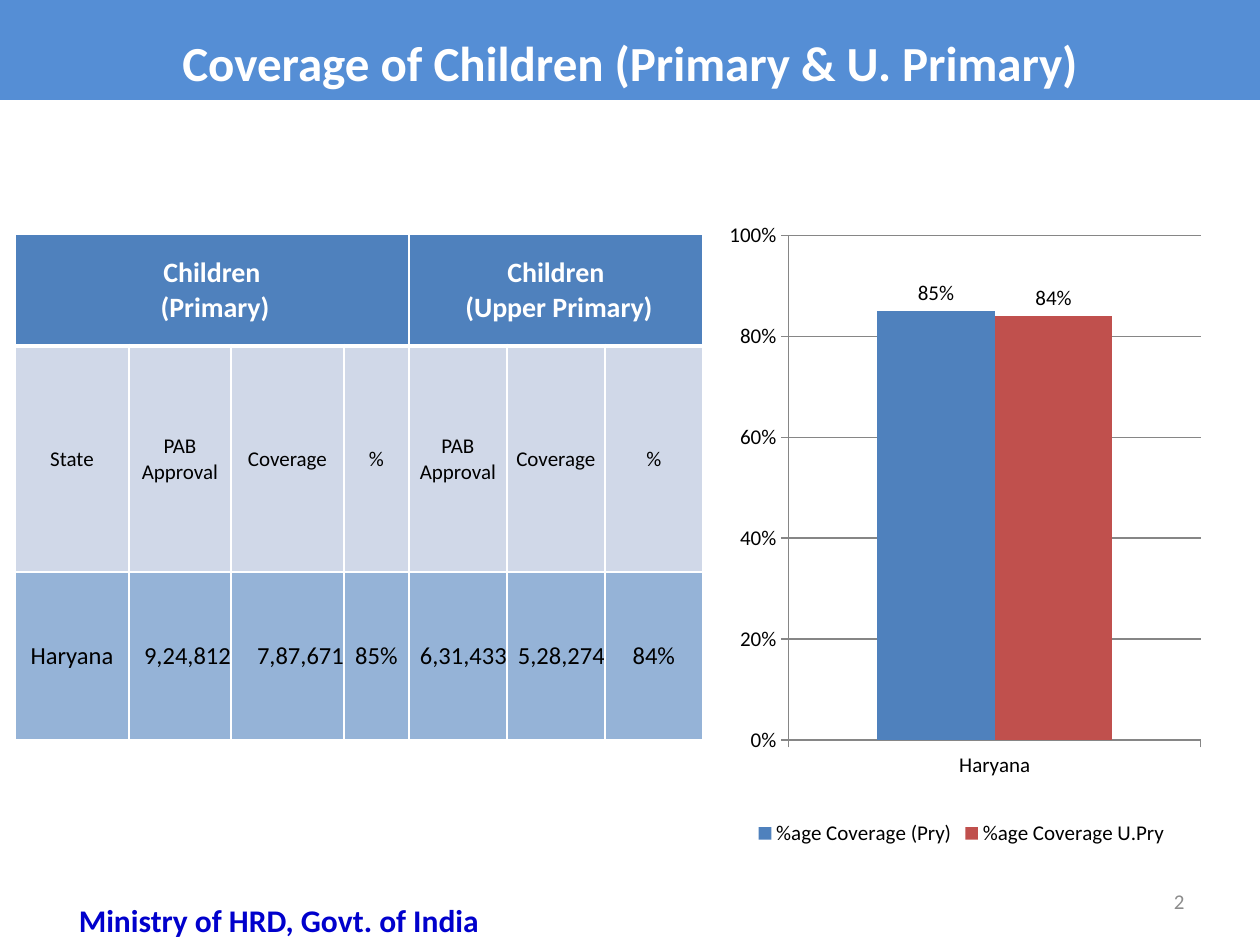
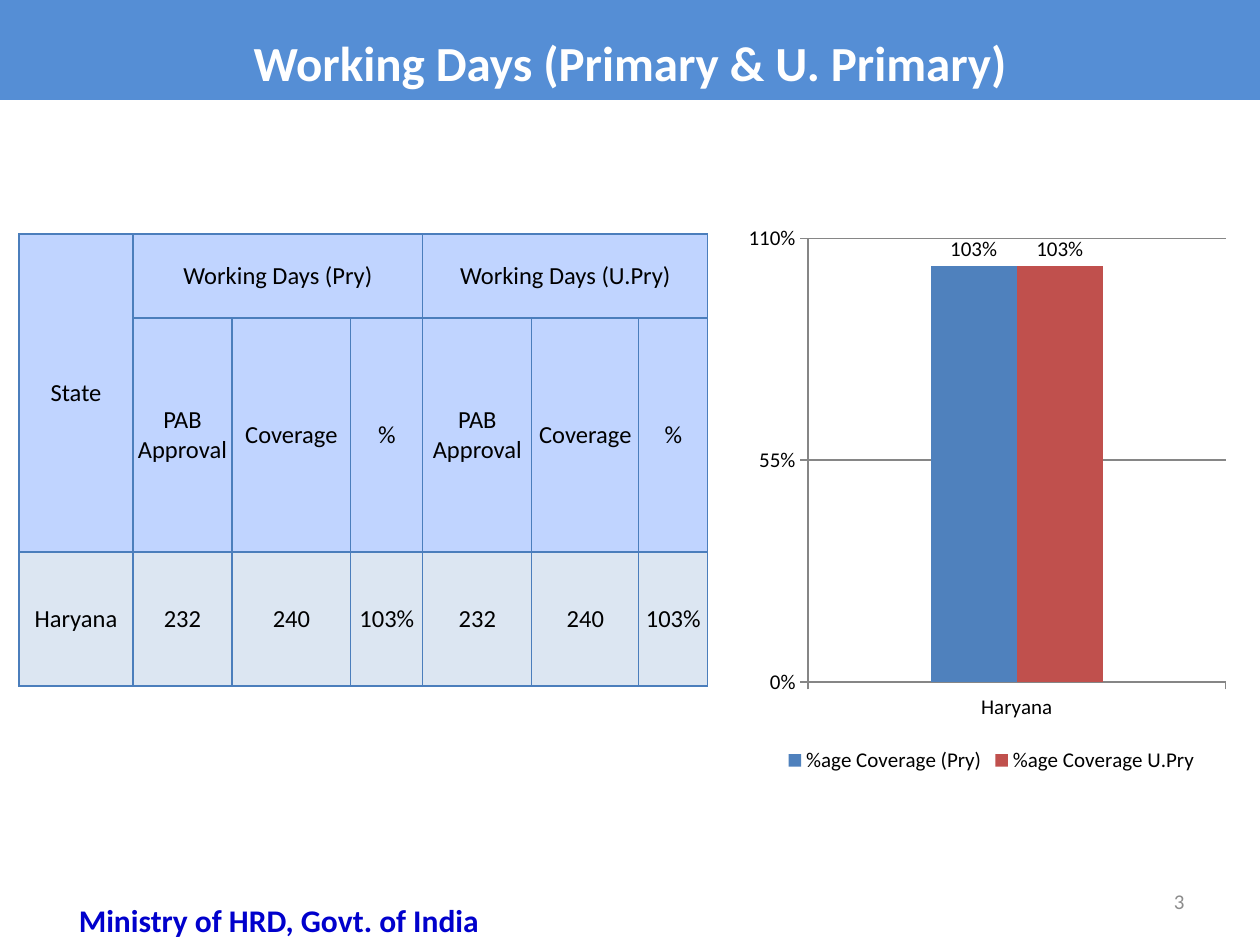
from lxml import etree
from pptx import Presentation
from pptx.chart.data import CategoryChartData
from pptx.dml.color import RGBColor
from pptx.enum.chart import XL_CHART_TYPE, XL_LABEL_POSITION, XL_LEGEND_POSITION, XL_TICK_MARK
from pptx.enum.shapes import MSO_SHAPE
from pptx.enum.text import MSO_ANCHOR, PP_ALIGN
from pptx.oxml import parse_xml
from pptx.oxml.ns import nsdecls, qn
from pptx.util import Pt

PX = 914400 / 126
FONT = "Calibri"
LEFT, MID, RIGHT = PP_ALIGN.LEFT, PP_ALIGN.CENTER, PP_ALIGN.RIGHT
CENTER = MSO_ANCHOR.MIDDLE
RECT = MSO_SHAPE.RECTANGLE
COLUMN = XL_CHART_TYPE.COLUMN_CLUSTERED
BOTTOM = XL_LEGEND_POSITION.BOTTOM
ABOVE = XL_LABEL_POSITION.OUTSIDE_END
OUT = XL_TICK_MARK.OUTSIDE

WHITE = RGBColor(0xFF, 0xFF, 0xFF)
BLACK = RGBColor(0, 0, 0)
BAND = RGBColor(0x55, 0x8E, 0xD5)
NAVY = RGBColor(0, 0, 0xCC)
GRAY = RGBColor(0x8C, 0x8C, 0x8C)
RULE = RGBColor(0x86, 0x86, 0x86)
BLUE = RGBColor(0x4F, 0x81, 0xBD)
RED = RGBColor(0xC0, 0x50, 0x4D)
PALE = RGBColor(0xD0, 0xD8, 0xE8)
STEEL = RGBColor(0x95, 0xB3, 0xD7)
SKY = RGBColor(0xC0, 0xD4, 0xFF)
ICE = RGBColor(0xDC, 0xE6, 0xF2)
EDGE = RGBColor(0x4B, 0x7E, 0xBC)

HEADS = ["PAB Approval", "Coverage", "%"] * 2
SERIES = [("%age Coverage (Pry)", BLUE), ("%age Coverage U.Pry", RED)]

# Row styles: fill, text size, text colour, bold
PAGES = [
    dict(
        title="Coverage of Children (Primary & U. Primary)", number="2",
        left=15, cols=[114, 102, 113, 65, 98, 98, 98], rows=[112, 226, 168],
        cells=[
            ["Children\n (Primary)", "", "", "", "Children\n (Upper Primary)", "", ""],
            ["State"] + HEADS,
            ["Haryana", "9,24,812", "7,87,671", "85%", "6,31,433", "5,28,274", "84%"],
        ],
        merges=[(0, 0, 0, 3), (0, 4, 0, 6)],
        styles=[(BLUE, 16, WHITE, True), (PALE, 12, BLACK, False), (STEEL, 14, BLACK, False)],
        edge=WHITE, widths=[1, 3, 1, 1],
        box=(703, 179, 517, 672), plot=(0.166, 0.084, 0.797, 0.751),
        values=[0.85, 0.84], top=1, step=0.2, gap=150,
    ),
    dict(
        title="Working Days (Primary & U. Primary)", number="3",
        left=19, cols=[114, 99, 119, 72, 109, 107, 69], rows=[84, 234, 134],
        cells=[
            ["State", "Working Days (Pry)", "", "", "Working Days (U.Pry)", "", ""],
            [""] + HEADS,
            ["Haryana"] + ["232", "240", "103%"] * 2,
        ],
        merges=[(0, 0, 1, 0), (0, 1, 0, 3), (0, 4, 0, 6)],
        styles=[(SKY, 14, BLACK, False), (SKY, 14, BLACK, False), (ICE, 14, BLACK, False)],
        edge=EDGE, widths=[0.75] * 4,
        box=(738, 197, 507, 581), plot=(0.138, 0.071, 0.824, 0.764),
        values=[1.03, 1.03], top=1.1, step=0.55, gap=285,
    ),
]


def px(*sizes):
    return [round(size * PX) for size in sizes]


def write(frame, text, size, color, bold=False, align=MID):
    frame.word_wrap = True
    for i, line in enumerate(text.split("\n")):
        para = frame.paragraphs[0] if i == 0 else frame.add_paragraph()
        para.alignment = align
        run = para.add_run()
        run.text = line
        run.font.name, run.font.size, run.font.bold = FONT, Pt(size), bold
        run.font.color.rgb = color


prs = Presentation()
prs.slide_width, prs.slide_height = px(1260, 945)

for page in PAGES:
    slide = prs.slides.add_slide(prs.slide_layouts[6])
    shapes = slide.shapes

    # Title band
    band = shapes.add_shape(RECT, *px(0, 0, 1260, 100))
    band.shadow.inherit = False
    band.fill.solid()
    band.fill.fore_color.rgb = BAND
    band.line.fill.background()
    band.text_frame.vertical_anchor = CENTER
    write(band.text_frame, page["title"], 28, WHITE, True)
    band.text_frame.paragraphs[0].line_spacing = 1.4

    # Chart
    data = CategoryChartData(number_format="0%")
    data.categories = ["Haryana"]
    for (name, color), value in zip(SERIES, page["values"]):
        data.add_series(name, [value])
    chart = shapes.add_chart(COLUMN, *px(*page["box"]), data).chart
    chart.has_title = False
    chart.font.name, chart.font.size = FONT, Pt(12)
    chart.font.color.rgb = BLACK
    chart.has_legend = True
    chart.legend.position = BOTTOM
    chart.legend.include_in_layout = False

    scale = chart.value_axis
    scale.minimum_scale, scale.maximum_scale = 0, page["top"]
    scale.major_unit = page["step"]
    scale.tick_labels.number_format = "0%"
    scale.tick_labels.number_format_is_linked = False
    scale.has_major_gridlines = True
    scale.major_gridlines.format.line.color.rgb = RULE
    scale.major_gridlines.format.line.width = Pt(0.75)
    for axis in (scale, chart.category_axis):
        axis.major_tick_mark = OUT
        axis.format.line.color.rgb = RULE
        axis.format.line.width = Pt(0.75)

    bars = chart.plots[0]
    bars.vary_by_categories = False
    bars.gap_width, bars.overlap = page["gap"], 0
    for series, (name, color) in zip(bars.series, SERIES):
        series.format.fill.solid()
        series.format.fill.fore_color.rgb = color
        labels = series.data_labels
        labels.show_value = True
        labels.number_format, labels.number_format_is_linked = "0%", False
        labels.position = ABOVE

    # Fixed inner plot area
    area = chart.element.find(".//" + qn("c:plotArea"))
    for old in area.findall(qn("c:layout")):
        area.remove(old)
    layout = parse_xml(f"<c:layout {nsdecls('c')}><c:manualLayout/></c:layout>")
    parts = [("layoutTarget", "inner"), ("xMode", "edge"), ("yMode", "edge")]
    parts += zip("xywh", page["plot"])
    for tag, value in parts:
        etree.SubElement(layout[0], qn("c:" + tag), val=str(value))
    area.insert(0, layout)

    # Table
    cols, rows = page["cols"], page["rows"]
    place = px(page["left"], 234, sum(cols), sum(rows))
    table = shapes.add_table(len(rows), len(cols), *place).table
    table.first_row = table.horz_banding = False
    for col, width in zip(table.columns, px(*cols)):
        col.width = width
    for row, height in zip(table.rows, px(*rows)):
        row.height = height
    for r, texts in enumerate(page["cells"]):
        fill, size, color, bold = page["styles"][r]
        for c, text in enumerate(texts):
            cell = table.cell(r, c)
            cell.fill.solid()
            cell.fill.fore_color.rgb = fill
            cell.vertical_anchor = CENTER
            count = "," in text
            side = 0 if count else 1
            cell.margin_left, cell.margin_right, cell.margin_top = px(side, side, side)
            cell.margin_bottom = 0
            if text:
                write(cell.text_frame, text, size, color, bold, RIGHT if count else MID)
            upper, lower = page["widths"][r:r + 2]
            props = cell._tc.get_or_add_tcPr()
            sides = zip("LRTB", (page["widths"][0], page["widths"][0], upper, lower))
            for i, (key, width) in enumerate(sides):
                props.insert(i, parse_xml(
                    f'<a:ln{key} {nsdecls("a")} w="{Pt(width)}"><a:solidFill>'
                    f'<a:srgbClr val="{page["edge"]}"/></a:solidFill></a:ln{key}>'))
    for r1, c1, r2, c2 in page["merges"]:
        table.cell(r1, c1).merge(table.cell(r2, c2))

    # Page number and footer
    number = shapes.add_textbox(*px(903, 876, 294, 50)).text_frame
    number.vertical_anchor = CENTER
    write(number, page["number"], 12, GRAY, align=RIGHT)
    footer = shapes.add_textbox(*px(32, 895, 494, 50)).text_frame
    write(footer, "Ministry of HRD, Govt. of India", 18, NAVY, True)

prs.save("out.pptx")
